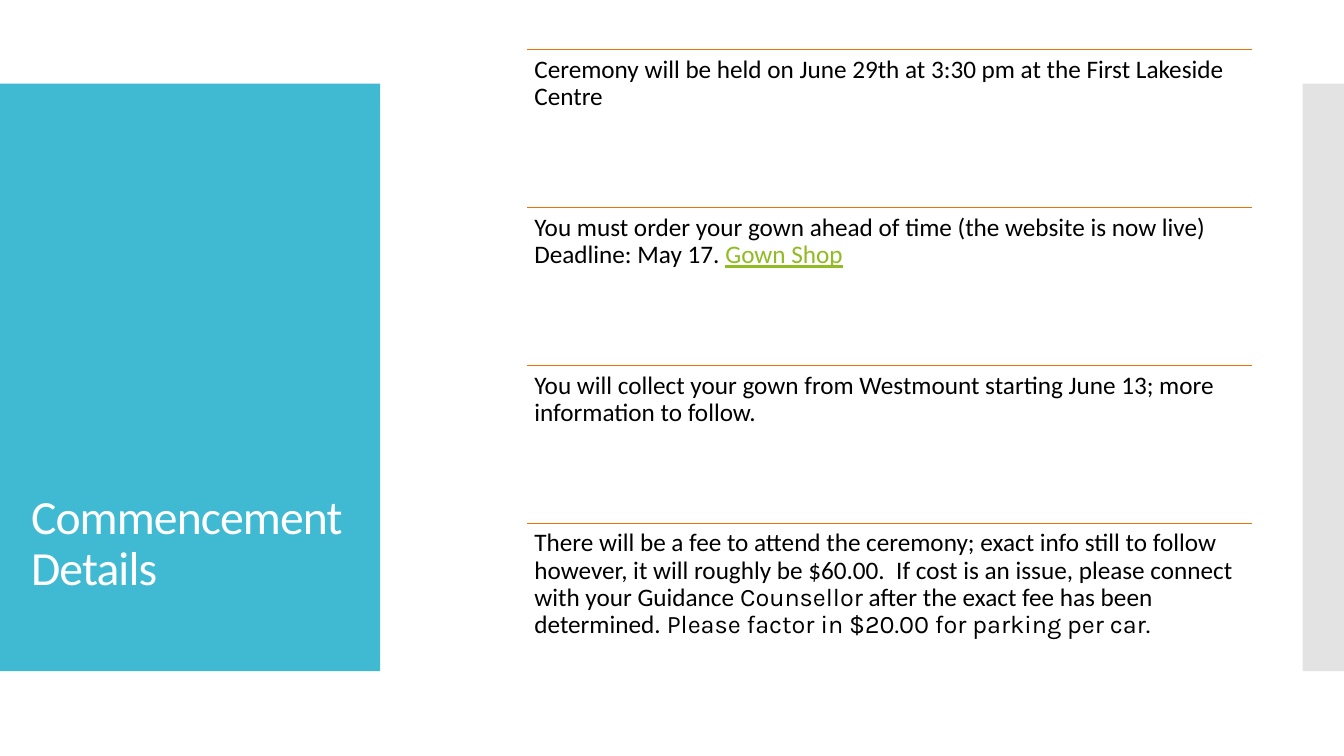
import pptx
import pptx.dml.color
import pptx.enum.shapes
import pptx.enum.text
import pptx.oxml.ns
import pptx.util
from lxml import etree

RGBColor = pptx.dml.color.RGBColor
Anchor = pptx.enum.text.MSO_ANCHOR

TEAL = RGBColor(0x40, 0xBA, 0xD2)
GREY = RGBColor(0xC8, 0xC8, 0xC8)
ORANGE = RGBColor(0xEE, 0x70, 0x08)
GREEN = RGBColor(0x90, 0xBB, 0x23)
BLACK = RGBColor(0, 0, 0)
WHITE = RGBColor(0xFF, 0xFF, 0xFF)

EMU_PER_PX = 9144  # 100 px to the inch
SLIDE_SIZE = (1333, 750)
DETAILS_LEFT, DETAILS_TOP = 523, 49
DETAILS_WIDTH, DETAILS_HEIGHT = 719, 627

# Each detail is a list of (text, format) runs.
DETAILS = [
    [("Ceremony will be held on June 29th at 3:30 pm at the First Lakeside Centre", {})],
    [
        ("You must order your gown ahead of time (the website is now live) Deadline: May 17. ", {}),
        ("Gown Shop", {"color": GREEN, "underline": True}),
    ],
    [("You will collect your gown from Westmount starting June 13; more information to follow.", {})],
    [
        ("There will be a fee to attend the ceremony; exact info still to follow however, "
         "it will roughly be $60.00.  If cost is an issue, please connect with your Guidance ", {}),
        ("Counsellor", {"font": "Karla"}),
        (" after the exact fee has been determined.", {}),
        (" Please factor in $20.00 for parking per car.", {"font": "Karla"}),
    ],
]


def px(*lengths):
    return [pptx.util.Emu(length * EMU_PER_PX) for length in lengths]


def add_run(paragraph, text, font="Calibri", size=18, color=BLACK, underline=None, spacing=None):
    """Add text to a paragraph; spacing is in hundredths of a point."""
    run = paragraph.add_run()
    run.text = text
    run.font.name = font
    run.font.size = pptx.util.Pt(size)
    run.font.color.rgb = color
    run.font.underline = underline
    if spacing is not None:
        run.font._element.set("spc", str(spacing))


class SlideBuilder:
    def __init__(self, presentation):
        self.slide = presentation.slides.add_slide(presentation.slide_layouts[6])
        self.line_width = pptx.util.Pt(0.85)
        self.line_spacing = 0.9

    def block(self, left, top, width, height, color, opacity=100):
        shape = self.slide.shapes.add_shape(
            pptx.enum.shapes.MSO_SHAPE.RECTANGLE, *px(left, top, width, height))
        shape.shadow.inherit = False
        shape.fill.solid()
        shape.fill.fore_color.rgb = color
        shape.line.fill.background()
        if opacity < 100:
            color_element = shape._element.spPr.find(".//" + pptx.oxml.ns.qn("a:srgbClr"))
            alpha = etree.SubElement(color_element, pptx.oxml.ns.qn("a:alpha"))
            alpha.set("val", str(opacity * 1000))

    def rule(self, left, top, width, color):
        connector = self.slide.shapes.add_connector(
            pptx.enum.shapes.MSO_CONNECTOR.STRAIGHT, *px(left, top, left + width, top))
        connector.line.color.rgb = color
        connector.line.width = self.line_width
        etree.SubElement(connector._element.spPr, pptx.oxml.ns.qn("a:effectLst"))

    def text(self, left, top, width, height, runs, anchor=Anchor.TOP, inset=7):
        box = self.slide.shapes.add_textbox(*px(left, top, width, height))
        frame = box.text_frame
        frame.word_wrap = True
        frame.vertical_anchor = anchor
        frame.margin_left, frame.margin_top, frame.margin_right, frame.margin_bottom = px(*[inset] * 4)
        paragraph = frame.paragraphs[0]
        paragraph.line_spacing = self.line_spacing
        for content, style in runs:
            add_run(paragraph, content, **style)


def main():
    presentation = pptx.Presentation()
    presentation.slide_width, presentation.slide_height = px(*SLIDE_SIZE)
    builder = SlideBuilder(presentation)

    builder.block(0, 83, 377, 583, TEAL)
    builder.block(1292, 83, 41, 583, GREY, opacity=50)
    title_style = {"size": 34, "color": WHITE, "spacing": -60}
    builder.text(21, 405, 357, 271, [("Commencement Details", title_style)],
                 anchor=Anchor.MIDDLE, inset=10)

    row_height = DETAILS_HEIGHT / len(DETAILS)
    for index, runs in enumerate(DETAILS):
        top = DETAILS_TOP + round(index * row_height)
        builder.rule(DETAILS_LEFT, top, DETAILS_WIDTH, ORANGE)
        builder.text(DETAILS_LEFT, top, DETAILS_WIDTH, round(row_height), runs)

    presentation.save("out.pptx")


if __name__ == "__main__":
    main()
